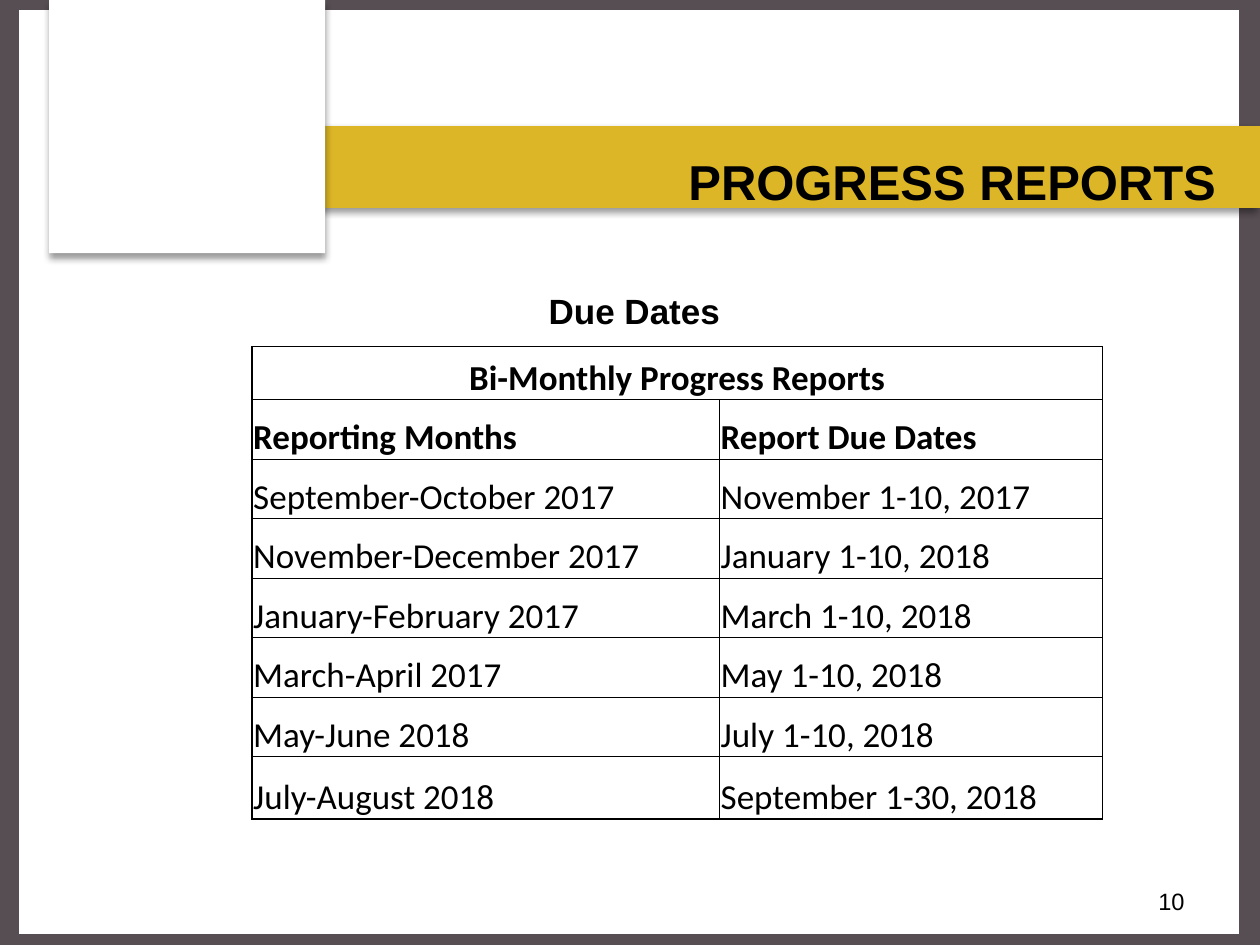
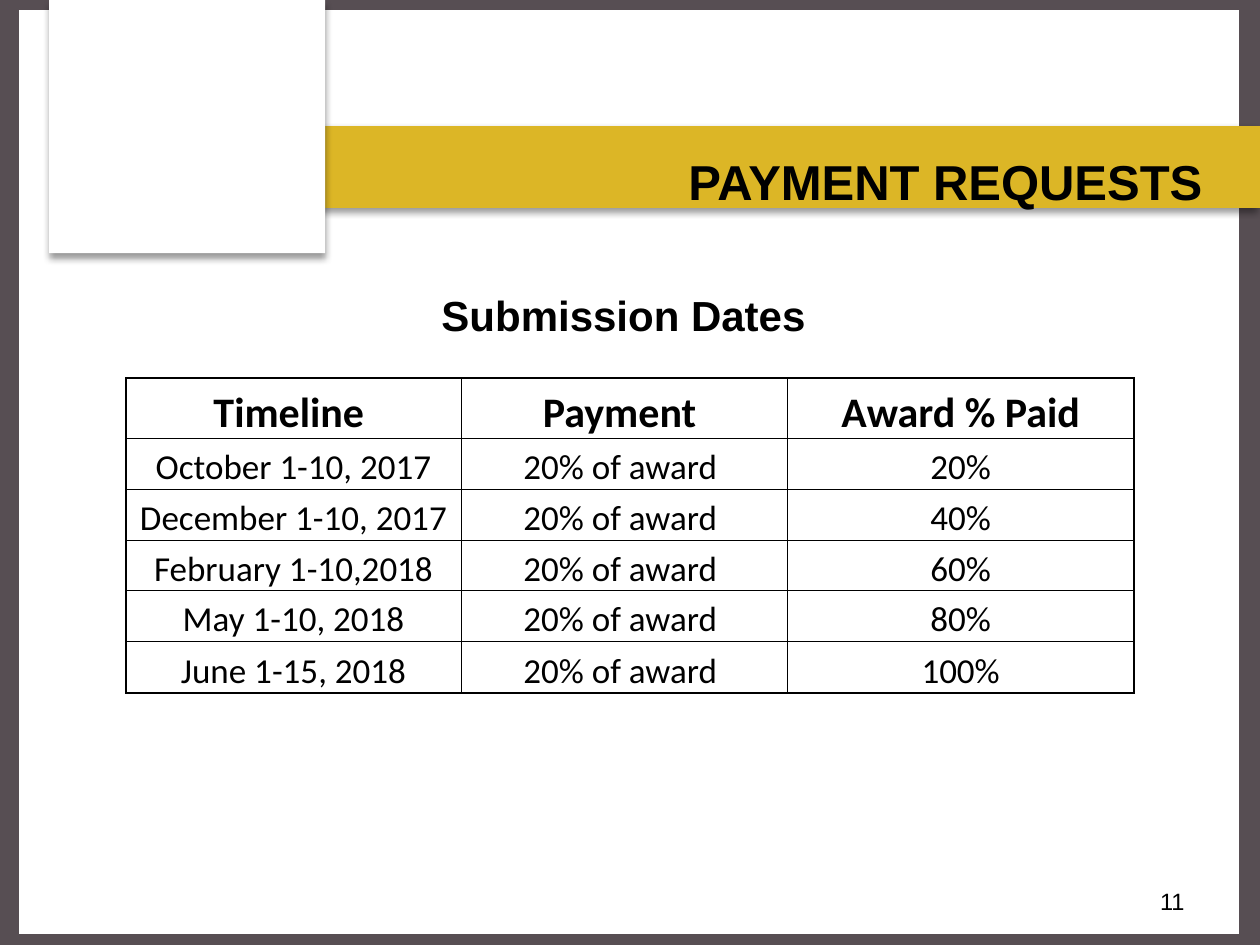
from lxml import etree
from pptx import Presentation
from pptx.dml.color import RGBColor
from pptx.enum.shapes import MSO_SHAPE
from pptx.enum.text import MSO_ANCHOR, MSO_AUTO_SIZE, PP_ALIGN
from pptx.oxml.ns import qn
from pptx.util import Inches, Pt

RECTANGLE = MSO_SHAPE.RECTANGLE
LEFT, CENTER, RIGHT = PP_ALIGN.LEFT, PP_ALIGN.CENTER, PP_ALIGN.RIGHT
TOP, MIDDLE, BOTTOM = MSO_ANCHOR.TOP, MSO_ANCHOR.MIDDLE, MSO_ANCHOR.BOTTOM
FIXED_SIZE, GROW = MSO_AUTO_SIZE.NONE, MSO_AUTO_SIZE.SHAPE_TO_FIT_TEXT

COLORS = {"ink": "000000", "paper": "FFFFFF", "gold": "DCB626", "frame": "574E53"}
HEADING_FONT, TABLE_FONT = "Arial", "Calibri"
COLUMNS, ROWS = 40, 30
TITLE_AND_CONTENT, TITLE_ONLY = 1, 5
THIN, THICK = 0.5, 1

PROGRESS_REPORTS = [
    ("Bi-Monthly Progress Reports", ""),
    ("Reporting Months", "Report Due Dates"),
    ("September-October 2017", "November 1-10, 2017"),
    ("November-December 2017", "January 1-10, 2018"),
    ("January-February 2017", "March 1-10, 2018"),
    ("March-April 2017", "May 1-10, 2018"),
    ("May-June 2018", "July 1-10, 2018"),
    ("July-August 2018", "September 1-30, 2018"),
]
PAYMENT_DATES = [
    "October 1-10, 2017",
    "December 1-10, 2017",
    "February 1-10,2018",
    "May 1-10, 2018",
    "June 1-15, 2018",
]
PAYMENTS = [("Timeline ", "Payment ", "Award % Paid")] + [
    (date, "20% of award ", f"{20 * number}%")
    for number, date in enumerate(PAYMENT_DATES, 1)
]


def rgb(color):
    return RGBColor.from_string(COLORS[color])


def add_xml(parent, tag, **attributes):
    return etree.SubElement(parent, qn(tag), attributes)


def shares(total, weights):
    return [round(total * weight / sum(weights)) for weight in weights]


class Deck:
    """Holds the deck's style and the slide being filled."""

    def __init__(self):
        self.prs = Presentation()
        self.prs.slide_width, self.prs.slide_height = Inches(10), Inches(7.5)
        self.slide = None

    def area(self, column, row, columns, rows):
        """Turn grid units into left, top, width and height."""
        across = self.prs.slide_width / COLUMNS
        down = self.prs.slide_height / ROWS
        return (round(column * across), round(row * down),
                round(columns * across), round(rows * down))

    def place(self, shape, area):
        shape.left, shape.top, shape.width, shape.height = self.area(*area)

    def start_slide(self, layout, title, number):
        self.slide = self.prs.slides.add_slide(self.prs.slide_layouts[layout])
        self.panel((0.28, 0, 39.4, 30), "paper", border="frame")
        self.panel((5.68, 4, 34.32, 2.6), "gold", shadow_angle=135)
        self.panel((1.56, 0, 8.76, 8.04), "paper", shadow_angle=90)
        self.title(title)
        self.text_box((28.68, 27.8, 9.32, 1.6), str(number), 13.5, RIGHT, MIDDLE)

    def panel(self, area, fill, border=None, shadow_angle=None):
        panel = self.slide.shapes.add_shape(RECTANGLE, *self.area(*area))
        panel.fill.solid()
        panel.fill.fore_color.rgb = rgb(fill)
        panel.shadow.inherit = False
        if border:
            panel.line.color.rgb = rgb(border)
            panel.line.width = Pt(12)
        else:
            panel.line.fill.background()
        if shadow_angle is not None:
            effects = panel.element.spPr.find(qn("a:effectLst"))
            shadow = add_xml(effects, "a:outerShdw", blurRad=str(Pt(4)), dist=str(Pt(3)),
                             dir=str(shadow_angle * 60000), algn="t", rotWithShape="0")
            tint = add_xml(shadow, "a:srgbClr", val=COLORS["ink"])
            add_xml(tint, "a:alpha", val="40000")

    def run(self, paragraph, text, size, bold=False, font=HEADING_FONT):
        run = paragraph.add_run()
        run.text = text
        run.font.size, run.font.bold, run.font.name = Pt(size), bold, font
        run.font.color.rgb = rgb("ink")

    def bring_to_front(self, shape):
        self.slide.shapes.element.append(shape.element)

    def title(self, text):
        title = self.slide.shapes.title
        self.bring_to_front(title)
        self.place(title, (11, 4.44, 28, 1.68))
        frame = title.text_frame
        frame.auto_size, frame.vertical_anchor = FIXED_SIZE, TOP
        frame.margin_top = Inches(0.09)
        frame.paragraphs[0].alignment = RIGHT
        self.run(frame.paragraphs[0], text, 28, bold=True)

    def body(self, area, runs):
        body = self.slide.placeholders[1]
        self.bring_to_front(body)
        self.place(body, area)
        body.text_frame.auto_size = FIXED_SIZE
        paragraph = body.text_frame.paragraphs[0]
        paragraph.alignment, paragraph.space_before = CENTER, Pt(0)
        properties = paragraph._p.get_or_add_pPr()
        properties.set("marL", "0")
        properties.set("indent", "0")
        add_xml(properties, "a:buNone")
        for text, size in runs:
            self.run(paragraph, text, size, bold=True)

    def text_box(self, area, text, size, align, anchor=TOP, bold=False, wrap=True):
        frame = self.slide.shapes.add_textbox(*self.area(*area)).text_frame
        frame.word_wrap, frame.vertical_anchor = wrap, anchor
        frame.auto_size = FIXED_SIZE if wrap else GROW
        frame.paragraphs[0].alignment = align
        self.run(frame.paragraphs[0], text, size, bold)

    def table(self, area, rows, widths, heights, header_sizes, align,
              thick_rows=(), thick_columns=(), merge_first=False):
        """Fill a table; the thick_ indexes name inner rules drawn like the outer edge."""
        left, top, width, height = self.area(*area)
        table = self.slide.shapes.add_table(
            len(rows), len(widths), left, top, width, height).table
        table.first_row = table.horz_banding = False
        for column, share in zip(table.columns, shares(width, widths)):
            column.width = share
        for row, share in zip(table.rows, shares(height, heights)):
            row.height = share
        if merge_first:
            table.cell(0, 0).merge(table.cell(0, len(widths) - 1))
        thick_rows = {0, len(rows), *thick_rows}
        thick_columns = {0, len(widths), *thick_columns}
        for r, values in enumerate(rows):
            is_header = r < len(header_sizes)
            size = header_sizes[r] if is_header else 20
            for c, text in enumerate(values):
                cell = table.cell(r, c)
                self.borders(cell, L=c in thick_columns, R=c + 1 in thick_columns,
                             T=r in thick_rows, B=r + 1 in thick_rows)
                cell.fill.background()
                cell.margin_left = cell.margin_right = cell.margin_top = Inches(0.01)
                cell.margin_bottom = 0
                cell.vertical_anchor = BOTTOM
                if text:
                    paragraph = cell.text_frame.paragraphs[0]
                    paragraph.alignment = CENTER if merge_first and r == 0 else align
                    self.run(paragraph, text, size, is_header, TABLE_FONT)

    def borders(self, cell, **thick_sides):
        properties = cell._tc.get_or_add_tcPr()
        for side, thick in thick_sides.items():
            line = add_xml(properties, f"a:ln{side}", w=str(Pt(THICK if thick else THIN)))
            add_xml(add_xml(line, "a:solidFill"), "a:srgbClr", val=COLORS["ink"])


def main():
    deck = Deck()

    deck.start_slide(TITLE_AND_CONTENT, "PROGRESS REPORTS", 10)
    deck.body((2, 9, 36, 18), [(" ", 18), ("Due Dates", 20)])
    deck.table((8, 11, 27, 15), PROGRESS_REPORTS, widths=(3.71, 3.04),
               heights=[0.42] + [0.47] * 6 + [0.49], header_sizes=(20, 20),
               align=LEFT, thick_rows=(1,), merge_first=True)

    deck.start_slide(TITLE_ONLY, "PAYMENT REQUESTS ", 11)
    deck.table((4, 12, 32, 10), PAYMENTS, widths=(2.66, 2.59, 2.75),
               heights=[0.48] + [0.4] * 4 + [0.41], header_sizes=(24,),
               align=CENTER, thick_columns=(2,))
    deck.text_box((13.56, 9, 12.84, 2), "Submission Dates ", 24, CENTER,
                  bold=True, wrap=False)

    deck.prs.save("out.pptx")


if __name__ == "__main__":
    main()
